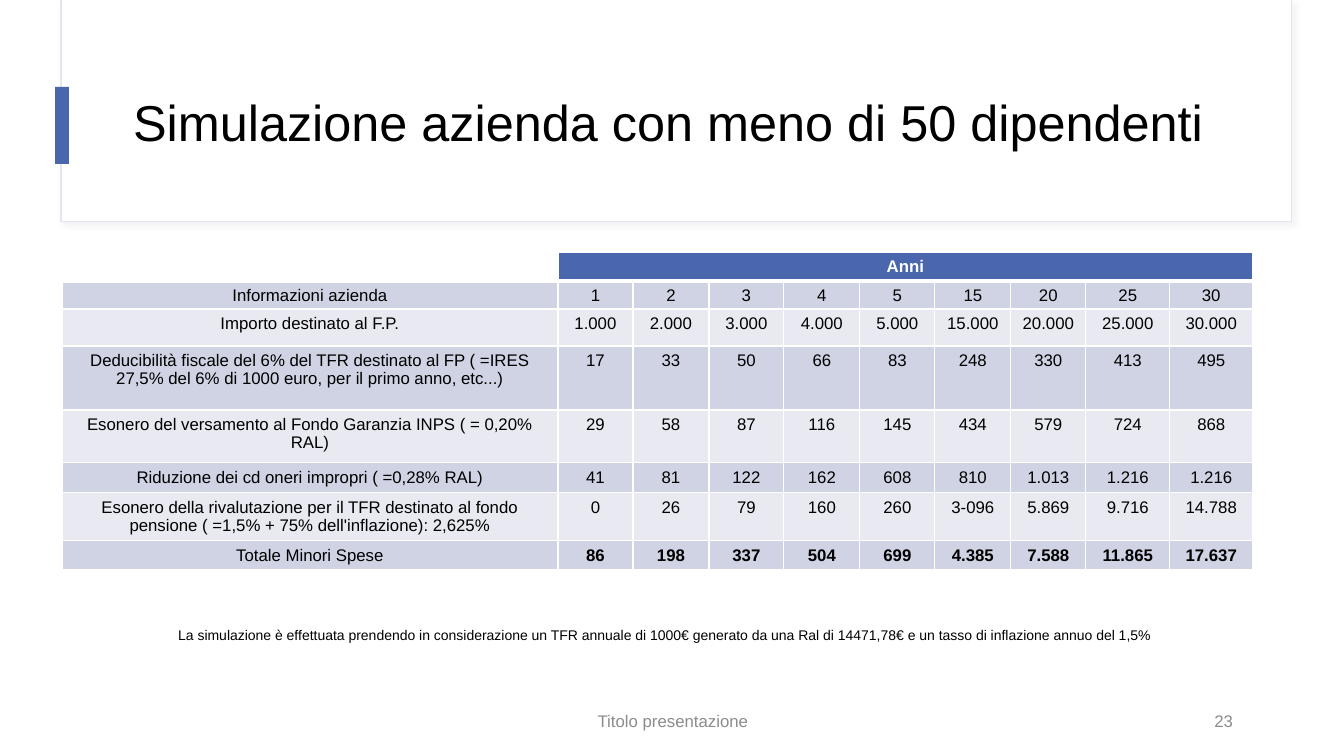
"""Build the slide on savings for a firm with fewer than 50 employees."""
from lxml import etree
from pptx import Presentation
from pptx.dml.color import RGBColor as Rgb
from pptx.enum.shapes import MSO_SHAPE as Kind
from pptx.enum.text import MSO_ANCHOR as Anchor, MSO_AUTO_SIZE as Fit, PP_ALIGN as Align
from pptx.oxml.ns import qn
from pptx.util import Pt

HUES = {"blue": "4A66AC", "dark": "D0D3E3", "light": "E9EAF1", "white": "FFFFFF",
        "black": "000000", "grey": "8C8C8C", "edge": "E4E5F3", "shade": "D9D9D9"}
FONT = "Arial"
TITLE = "Simulazione azienda con meno di 50 dipendenti"
NOTE = ("La simulazione è effettuata prendendo in considerazione un TFR annuale di 1000€ "
        "generato da una Ral di 14471,78€ e un tasso di inflazione annuo del 1,5%")
TEXTS = [
    ("Titolo presentazione", (446, 701, 454, 40), 12, "grey", Align.CENTER, Anchor.MIDDLE, 1.0),
    ("23", (941, 701, 302, 40), 12, "grey", Align.RIGHT, Anchor.MIDDLE, 1.0),
    (NOTE, (123, 623, 1082, 40), 10, "black", Align.CENTER, Anchor.TOP, 0.9),
]
HEAD = "Anni"
ROWS = [
    ("Informazioni azienda", "1 2 3 4 5 15 20 25 30"),
    ("Importo destinato al F.P.",
     "1.000 2.000 3.000 4.000 5.000 15.000 20.000 25.000 30.000"),
    ("Deducibilità fiscale del 6% del TFR destinato al FP ( =IRES 27,5% del 6% "
     "di 1000 euro, per il primo anno, etc...)", "17 33 50 66 83 248 330 413 495"),
    ("Esonero del versamento al Fondo Garanzia INPS ( = 0,20% RAL)",
     "29 58 87 116 145 434 579 724 868"),
    ("Riduzione dei cd oneri impropri ( =0,28% RAL)",
     "41 81 122 162 608 810 1.013 1.216 1.216"),
    ("Esonero della rivalutazione per il TFR destinato al fondo pensione "
     "( =1,5% + 75% dell'inflazione): 2,625%",
     "0 26 79 160 260 3-096 5.869 9.716 14.788"),
    ("Totale Minori Spese", "86 198 337 504 699 4.385 7.588 11.865 17.637"),
]
WIDE = [496] + [75, 76] * 3 + [75, 84, 83]
HIGH = [29, 28, 37, 64, 53, 30, 48, 29]


def px(*nums):
    return [round(num * 914400 / 100.8) for num in nums]


def hue(name):
    return Rgb.from_string(HUES[name])


def paint(shape, name):
    shape.fill.solid()
    shape.fill.fore_color.rgb = hue(name)


def write(frame, text, size, name, align, bold=False, lead=1.0):
    frame.text = text
    frame.word_wrap = True
    para = frame.paragraphs[0]
    para.alignment, para.line_spacing = align, lead
    font = para.font
    font.name, font.size, font.bold = FONT, Pt(size), bold
    font.color.rgb = hue(name)


def add(parent, tag, **attrs):
    node = etree.SubElement(parent, qn(tag))
    for key, val in attrs.items():
        node.set(key, str(val))
    return node


def edge(cell, row):
    props = cell._tc.get_or_add_tcPr()
    for spot, side in enumerate("LRTB"):
        thick = (row, side) in ((0, "B"), (1, "T"))
        line = add(props, f"a:ln{side}", w=Pt(3 if thick else 1))
        add(add(line, "a:solidFill"), "a:srgbClr", val=HUES["white"])
        props.insert(spot, line)


def block(slide, box, name):
    shape = slide.shapes.add_shape(Kind.RECTANGLE, *px(*box))
    shape.shadow.inherit = False
    paint(shape, name)
    shape.line.fill.background()
    return shape


def frame(slide):
    card = block(slide, (61, 0, 1231, 222), "white")
    card.line.color.rgb = hue("edge")
    card.line.width = Pt(0.75)
    glow = add(card._element.spPr.find(qn("a:effectLst")), "a:outerShdw",
               blurRad=Pt(4), dist=Pt(3), dir=45 * 60000, algn="tl", rotWithShape=0)
    add(add(glow, "a:srgbClr", val=HUES["shade"]), "a:alpha", val=30000)
    block(slide, (55, 87, 14, 77), "blue")


def head(slide):
    title = slide.shapes.title
    title.left, title.top, title.width, title.height = px(123, 60, 1121, 130)
    write(title.text_frame, TITLE, 36, "black", Align.LEFT, lead=0.9)
    title.text_frame.vertical_anchor = Anchor.MIDDLE
    title.text_frame.auto_size = Fit.NONE
    title._element.getparent().append(title._element)


def grid(slide):
    cells = [["", HEAD] + [""] * 8] + [[name] + vals.split() for name, vals in ROWS]
    table = slide.shapes.add_table(len(HIGH), len(WIDE),
                                   *px(62, 252, sum(WIDE), sum(HIGH))).table
    table.first_row = table.horz_banding = False
    for col, size in zip(table.columns, px(*WIDE)):
        col.width = size
    for row, size in zip(table.rows, px(*HIGH)):
        row.height = size
    table.cell(0, 1).merge(table.cell(0, len(WIDE) - 1))
    for i, line in enumerate(cells):
        for j, text in enumerate(line):
            cell = table.cell(i, j)
            cell.margin_top, cell.margin_bottom = px(5, 3)
            top, total = i == 0, i == len(ROWS) and j > 0
            write(cell.text_frame, text, 12, "white" if top else "black",
                  Align.CENTER, top or total)
            if top and j == 0:
                cell.fill.background()
            else:
                paint(cell, "blue" if top else "dark" if i % 2 else "light")
            edge(cell, i)


def main():
    deck = Presentation()
    deck.slide_width, deck.slide_height = px(1344, 756)
    slide = deck.slides.add_slide(deck.slide_layouts[5])
    frame(slide)
    head(slide)
    grid(slide)
    for text, box, size, name, align, anchor, lead in TEXTS:
        area = slide.shapes.add_textbox(*px(*box)).text_frame
        write(area, text, size, name, align, lead=lead)
        area.vertical_anchor = anchor
    deck.save("out.pptx")


if __name__ == "__main__":
    main()
